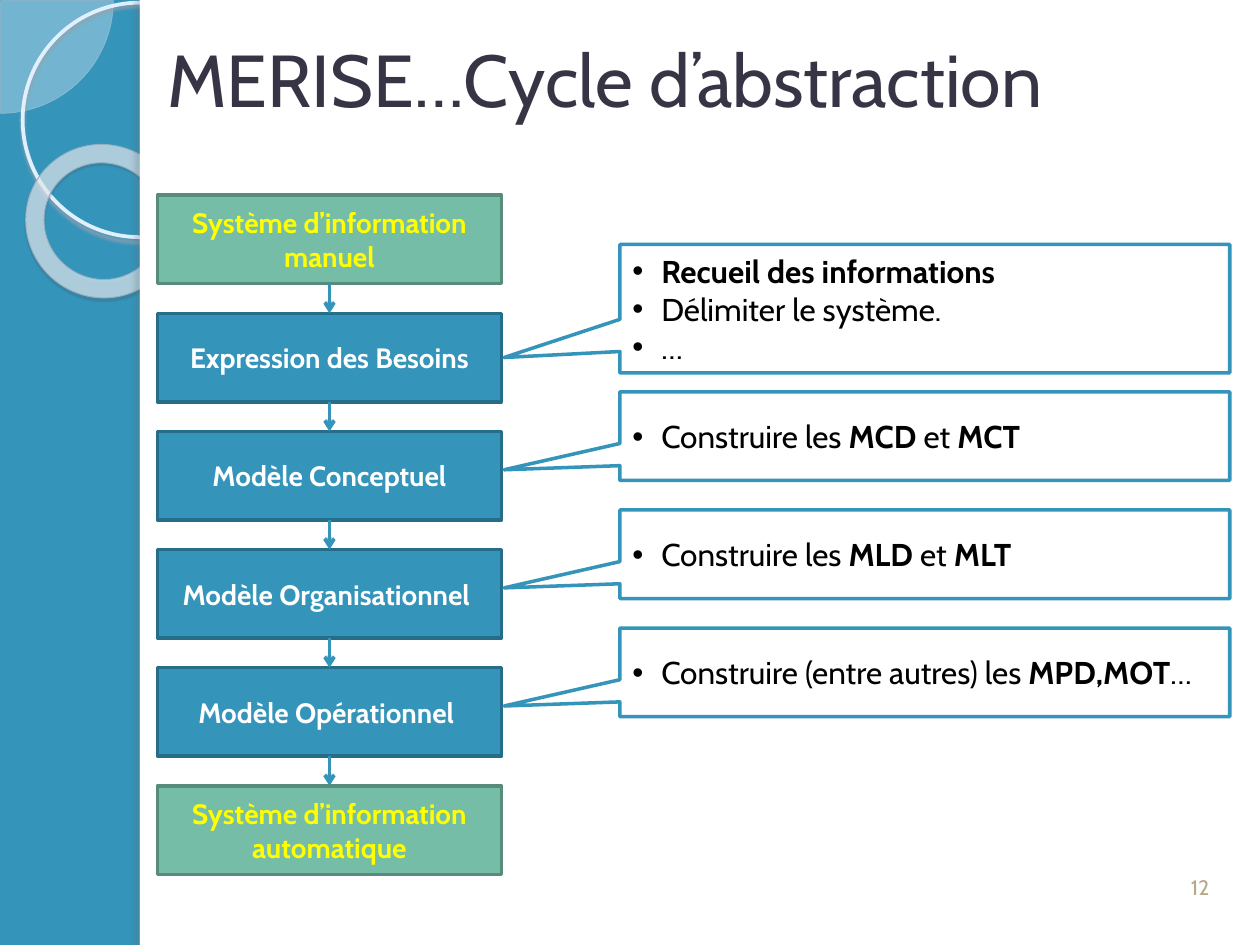
"""Build the slide on the MERISE abstraction cycle."""
import dataclasses
import typing

import lxml.etree
import pptx
import pptx.dml.color
import pptx.enum.dml
import pptx.enum.shapes
import pptx.enum.text
import pptx.oxml
import pptx.oxml.ns
import pptx.util

COLORS = {
    "blue": "3494BA", "blue edge": "266D8A", "green": "75BDA7", "green edge": "578C7C",
    "white": "FFFFFF", "black": "000000", "yellow": "FFFF00", "title": "373545",
    "number": "B5A788", "pale": "F5F9FD", "pale edge": "A6BCCF", "ring": "E0F0FF",
    "ring shade": "94A2AF", "donut edge": "99B0C4", "donut shade": "475159", "strip shade": "666D73",
}
FONT = "Cabin"
WIDTH, HEIGHT = pptx.util.Inches(10), pptx.util.Inches(7.5)
COLUMNS, ROWS = 40, 32
STEP_LEFT, STEP_TOP, STEP_WIDTH, STEP_HEIGHT, STEP_PITCH = 5, 6.61, 10.92, 3, 4
SHAPES = pptx.enum.shapes.MSO_SHAPE
ALIGN = pptx.enum.text.PP_ALIGN
ANCHOR = pptx.enum.text.MSO_ANCHOR


class Area(typing.NamedTuple):
    left: float
    top: float
    width: float
    height: float


class Span(typing.NamedTuple):
    text: str
    bold: bool = False


class Shade(typing.NamedTuple):
    color: str
    alpha: int
    blur: float
    distance: float
    angle: int


@dataclasses.dataclass
class Look:
    fill: str | None = None
    edge: str | None = None
    weight: float = 2
    alpha: int = 100
    shade: Shade | None = None


@dataclasses.dataclass
class Step:
    lines: list[str]
    system: bool = False


@dataclasses.dataclass
class Callout:
    area: Area
    pointer: tuple[float, float]
    lines: list[list[Span]]


STEPS = [
    Step(["Système d’information", "manuel"], True),
    Step(["Expression des Besoins"]),
    Step(["Modèle Conceptuel"]),
    Step(["Modèle Organisationnel "]),
    Step(["Modèle Opérationnel "]),
    Step(["Système d’information", "automatique"], True),
]
MODELS = [
    [Span("Construire les "), Span("MCD", True), Span(" et "), Span("MCT", True)],
    [Span("Construire les "), Span("MLD", True), Span(" et "), Span("MLT", True)],
    [Span("Construire (entre autres) les "), Span("MPD,MOT", True), Span("…")],
]
CALLOUTS = [
    Callout(Area(19.68, 8.28, 19.36, 4.35), (-0.69, 0.38),
            [[Span("Recueil des informations", True)], [Span("Délimiter le système.")], [Span("…")]]),
    *(Callout(Area(19.68, 13.27 + STEP_PITCH * index, 19.36, 3), (-0.69, 0.38), [line])
      for index, line in enumerate(MODELS)),
]
DECOR = [
    (SHAPES.PIE, Area(-3.56, -3.8, 7.16, 7.64), Look("pale", "pale edge", 0.25, 33), [0, 54], 0),
    (SHAPES.OVAL, Area(0.72, 0.09, 7.44, 7.94),
     Look(None, "ring", 2.15, shade=Shade("ring shade", 85, 2, 2, 90)), [], 0),
    (SHAPES.DONUT, Area(0.8, 4.91, 4.92, 5.16),
     Look("pale", "donut edge", 0.58, 62, Shade("donut shade", 35, 1, 1.2, 75)), [0.12], 38.6),
    (SHAPES.RECTANGLE, Area(4.44, 0, 35.56, ROWS), Look("white"), [], 0),
    (SHAPES.RECTANGLE, Area(4.44, 0, 0.32, ROWS),
     Look("white", shade=Shade("strip shade", 25, 3, 3, 180)), [], 0),
]


def rgb(name: str) -> pptx.dml.color.RGBColor:
    """Return a named colour."""
    return pptx.dml.color.RGBColor.from_string(COLORS[name])


def across(columns: float) -> int:
    """Turn grid columns into a length."""
    return round(WIDTH * columns / COLUMNS)


def down(rows: float) -> int:
    """Turn grid rows into a length."""
    return round(HEIGHT * rows / ROWS)


def place(area: Area) -> tuple[int, int, int, int]:
    """Turn a grid area into left, top, width and height."""
    return across(area.left), down(area.top), across(area.width), down(area.height)


def add_child(parent, tag: str, **attributes):
    """Append a drawing element to its parent."""
    values = {key: str(value) for key, value in attributes.items()}
    return lxml.etree.SubElement(parent, pptx.oxml.ns.qn(tag), values)


def add_shade(shape, shade: Shade) -> None:
    """Give a shape an outer shadow."""
    effects = shape._element.spPr.find(pptx.oxml.ns.qn("a:effectLst"))
    outer = add_child(effects, "a:outerShdw", blurRad=pptx.util.Pt(shade.blur),
                      dist=pptx.util.Pt(shade.distance), dir=shade.angle * 60000, rotWithShape=0)
    color = add_child(outer, "a:srgbClr", val=COLORS[shade.color])
    add_child(color, "a:alpha", val=shade.alpha * 1000)


def add_figure(page, kind, area: Area, look: Look, adjustments: typing.Sequence[float] = (), turn: float = 0):
    """Draw a preset shape with its fill, edge and shadow."""
    shape = page.shapes.add_shape(kind, *place(area))
    shape.shadow.inherit = False
    shape.rotation = turn
    for index, value in enumerate(adjustments):
        shape.adjustments[index] = value
    if look.fill:
        shape.fill.solid()
        shape.fill.fore_color.rgb = rgb(look.fill)
        if look.alpha < 100:
            color = shape.fill._xPr.find(".//" + pptx.oxml.ns.qn("a:srgbClr"))
            add_child(color, "a:alpha", val=look.alpha * 1000)
    else:
        shape.fill.background()
    if look.edge:
        shape.line.color.rgb = rgb(look.edge)
        shape.line.width = pptx.util.Pt(look.weight)
    else:
        shape.line.fill.background()
    if look.shade:
        add_shade(shape, look.shade)
    return shape


def write(box, lines: list[list[Span]], size: float, color: str, align=ALIGN.CENTER,
          anchor=ANCHOR.MIDDLE, bullets: bool = False) -> None:
    """Fill a box with formatted paragraphs."""
    frame = box.text_frame
    frame.word_wrap = True
    frame.auto_size = pptx.enum.text.MSO_AUTO_SIZE.NONE
    frame.vertical_anchor = anchor
    frame.text = "\n" * (len(lines) - 1)
    for para, spans in zip(frame.paragraphs, lines):
        para.alignment = align
        if bullets:
            indent = pptx.util.Inches(0.23)
            properties = para._p.get_or_add_pPr()
            properties.set("marL", str(indent))
            properties.set("indent", str(-indent))
            add_child(properties, "a:buFont", typeface="Arial")
            add_child(properties, "a:buChar", char="•")
        for text, bold in spans:
            span = para.add_run()
            span.text = text
            span.font.name = FONT
            span.font.size = pptx.util.Pt(size)
            span.font.bold = bold
            span.font.color.rgb = rgb(color)


def add_step(page, index: int, step: Step) -> None:
    """Draw one step of the cycle."""
    tone = "green" if step.system else "blue"
    area = Area(STEP_LEFT, STEP_TOP + STEP_PITCH * index, STEP_WIDTH, STEP_HEIGHT)
    box = add_figure(page, SHAPES.RECTANGLE, area, Look(tone, f"{tone} edge"))
    write(box, [[Span(line, True)] for line in step.lines], 16, "yellow" if step.system else "white")


def add_arrow(page, index: int) -> None:
    """Draw the arrow from one step to the next."""
    middle = across(STEP_LEFT + STEP_WIDTH / 2)
    top = STEP_TOP + STEP_PITCH * index
    arrow = page.shapes.add_connector(pptx.enum.shapes.MSO_CONNECTOR.STRAIGHT, middle,
                                      down(top + STEP_HEIGHT), middle, down(top + STEP_PITCH))
    arrow.line.color.rgb = rgb("blue")
    arrow.line.width = pptx.util.Pt(2)
    add_child(arrow.line._get_or_add_ln(), "a:tailEnd", type="arrow")
    add_child(arrow._element.spPr, "a:effectLst")


def add_callout(page, callout: Callout) -> None:
    """Draw the bulleted callout of one step."""
    box = add_figure(page, SHAPES.RECTANGULAR_CALLOUT, callout.area, Look("white", "blue"), callout.pointer)
    write(box, callout.lines, 18, "black", ALIGN.LEFT, bullets=True)


def add_title(page, text: str) -> None:
    """Move the title placeholder into place, in front of the panel."""
    title = page.shapes.title
    title.left, title.top, title.width, title.height = place(Area(4.68, 0.68, 34.36, 5))
    title.text_frame.margin_left = pptx.util.Inches(0.16)
    title.text_frame.margin_top = pptx.util.Inches(0.11)
    write(title, [[Span(text)]], 42, "title", ALIGN.LEFT, ANCHOR.TOP)
    page.shapes._spTree.append(title._element)


def main() -> None:
    """Build and save the deck."""
    deck = pptx.Presentation()
    deck.slide_width, deck.slide_height = WIDTH, HEIGHT
    page = deck.slides.add_slide(deck.slide_layouts[5])
    page.background.fill.solid()
    page.background.fill.fore_color.rgb = rgb("blue")
    for figure in DECOR:
        add_figure(page, *figure)
    for index, step in enumerate(STEPS):
        add_step(page, index, step)
    for index in range(len(STEPS) - 1):
        add_arrow(page, index)
    for callout in CALLOUTS:
        add_callout(page, callout)
    number = page.shapes.add_textbox(*place(Area(36.76, 28.54, 2.68, 2.13)))
    write(number, [[Span("12")]], 12, "number", anchor=ANCHOR.BOTTOM)
    add_title(page, "MERISE…Cycle d’abstraction")
    deck.save("out.pptx")


if __name__ == "__main__":
    main()
